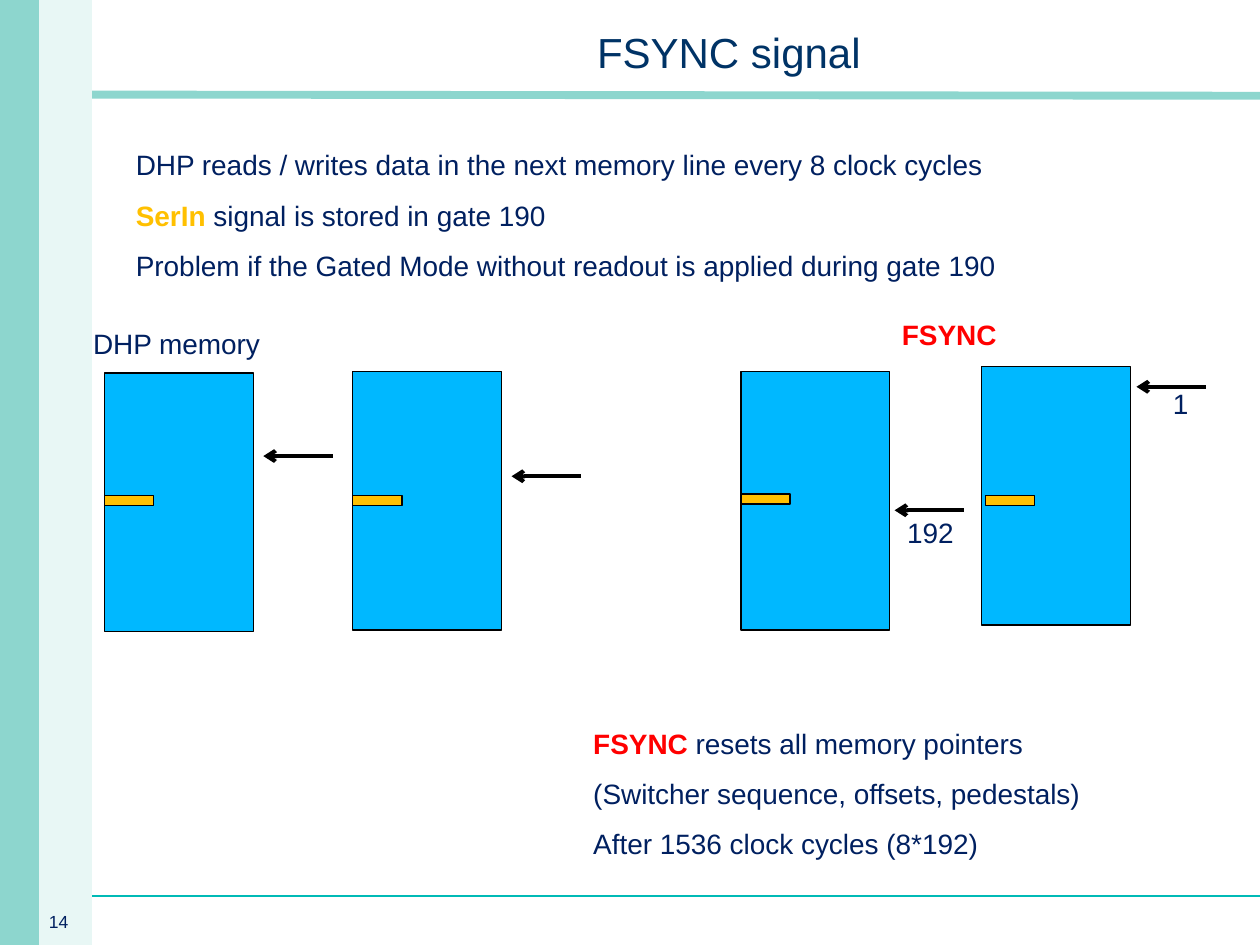
from pptx import Presentation
from pptx import util as u
from pptx.dml.color import RGBColor
from pptx.enum import shapes, text
from pptx.oxml.ns import qn
from lxml import etree

NAVY, RED, GOLD, SKY, MINT = "002060", "FF0000", "FFC000", "00B8FF", "8DD6CE"


def tint(code):
    """Turn a hex string into a colour."""
    return RGBColor.from_string(code)


class Deck:
    """Hold the style and the current slide, on a grid of 100 columns by 75 rows."""

    font = "Arial"
    size = 16

    def __init__(self):
        self.prs = Presentation()
        self.prs.slide_width, self.prs.slide_height = u.Inches(10), u.Inches(7.5)
        self.page = self.prs.slides.add_slide(self.prs.slide_layouts[6])

    def grid(self, *cells):
        """Turn columns and rows into lengths."""
        return [u.Inches(cell / 10) for cell in cells]

    def rect(self, box, fill, edge=None):
        """Draw a filled rectangle, with a thin edge if one is given."""
        item = self.page.shapes.add_shape(shapes.MSO_SHAPE.RECTANGLE, *self.grid(*box))
        item.shadow.inherit = False
        item.fill.solid()
        item.fill.fore_color.rgb = tint(fill)
        if edge:
            item.line.color.rgb = tint(edge)
            item.line.width = u.Pt(0.75)
        else:
            item.line.fill.background()

    def line(self, ends, color, width, arrow=False):
        """Draw a straight line, with an arrowhead at its end if asked."""
        item = self.page.shapes.add_connector(
            shapes.MSO_CONNECTOR.STRAIGHT, *self.grid(*ends))
        item.line.color.rgb = tint(color)
        item.line.width = u.Pt(width)
        if arrow:
            etree.SubElement(item.line._get_or_add_ln(), qn("a:tailEnd"), type="arrow")
        etree.SubElement(item._element.spPr, qn("a:effectLst"))

    def text(self, box, rows, space=0.8, wrap=False, size=None, **form):
        """Write rows of (words, colour, bold) runs in a text box."""
        frame = self.page.shapes.add_textbox(*self.grid(*box)).text_frame
        frame.word_wrap = wrap
        frame.vertical_anchor = form.pop("anchor", text.MSO_ANCHOR.TOP)
        for i, row in enumerate(rows):
            para = frame.add_paragraph() if i else frame.paragraphs[0]
            for key, val in {"line_spacing": space, **form}.items():
                setattr(para, key, val)
            for words, color, bold in row:
                run = para.add_run()
                run.text = words
                look = {"name": self.font, "size": u.Pt(size or self.size), "bold": bold}
                for key, val in look.items():
                    setattr(run.font, key, val)
                run.font.color.rgb = tint(color)

    def label(self, box, words, color=NAVY, bold=False, **form):
        """Write one line in one style."""
        self.text(box, [[(words, color, bold)]], **form)

    def store(self, left, top, mark, tip, nudge=0):
        """Draw a memory block with its gate mark and its pointer."""
        self.rect((left, top, 11.8, 20.5), SKY, "000000")
        self.rect((left + nudge, mark, 3.9, 0.8), GOLD, "000000")
        x, y = tip
        self.line((x + 5.5, y, x, y), "000000", 2.25, arrow=True)


def main():
    """Build the slide."""
    deck = Deck()
    deck.line((0, 7.5, 100, 7.6), MINT, 4.5)
    deck.line((7.3, 71.1, 100, 71.1), "00BAB6", 1.5)
    deck.rect((3, 0, 4.3, 75), "E8F7F5")
    deck.rect((0, 0, 3.1, 75), MINT)
    deck.label((2.9, 72.1, 4.8, 2.4), "14", size=10)
    deck.label((17.7, 1.3, 80.3, 5.2), "FSYNC signal", "003366", size=24, space=1.1,
               wrap=True, anchor=text.MSO_ANCHOR.MIDDLE, alignment=text.PP_ALIGN.CENTER)
    deck.text((9.8, 9.9, 86.6, 13.1), [
        [("DHP reads / writes data in the next memory line every 8 clock cycles", NAVY, False)],
        [("SerIn ", GOLD, True), ("signal is stored in gate 190", NAVY, False)],
        [("Problem if the Gated Mode without readout is applied during gate 190", NAVY, False)],
    ], space=1.5, wrap=True)

    deck.store(8.3, 29.6, 39.3, (20.9, 36.2))
    deck.store(28, 29.5, 39.3, (40.6, 37.8))
    deck.store(58.8, 29.5, 39.2, (71, 40.5))
    deck.store(77.9, 29.1, 39.3, (90.2, 30.7), nudge=0.3)
    deck.label((6.4, 25.9, 15.4, 3.2), "DHP memory")
    deck.label((70.6, 25.2, 9.6, 3.2), "FSYNC", RED, True)
    deck.label((71, 40.9, 5.8, 3.2), "192")
    deck.label((92.1, 30.7, 3.3, 3.2), "1")

    deck.text((46.1, 55.8, 41.2, 13.1), [
        [("FSYNC", RED, True), (" resets all memory pointers", NAVY, False)],
        [("(Switcher sequence, offsets, pedestals)", NAVY, False)],
        [("After 1536 clock cycles (8*192)", NAVY, False)],
    ], space=1.5)
    deck.prs.save("out.pptx")


if __name__ == "__main__":
    main()
